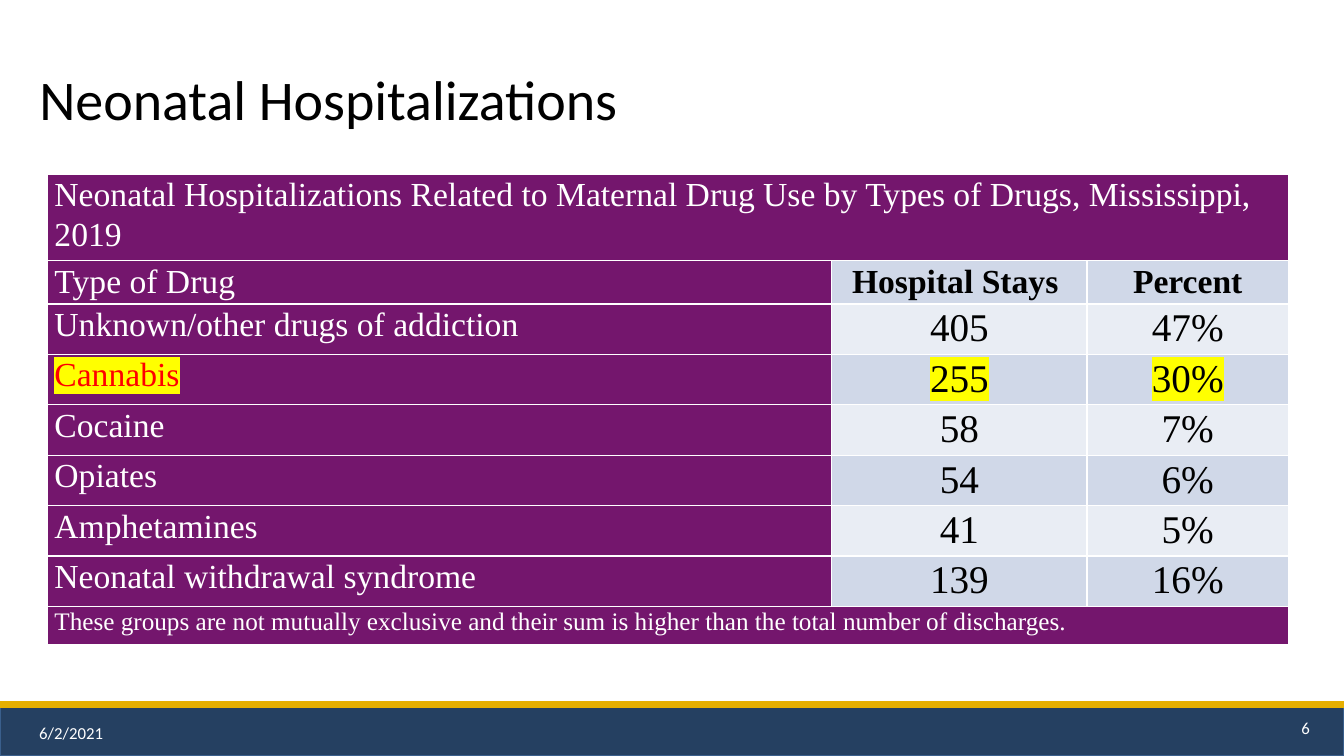
import collections
import dataclasses

import lxml.etree
import pptx
import pptx.dml.color
import pptx.enum.shapes
import pptx.enum.text
import pptx.oxml.ns
import pptx.util

Box = collections.namedtuple("Box", "left top width height")
ALIGN = pptx.enum.text.PP_ALIGN
ANCHOR = pptx.enum.text.MSO_ANCHOR


@dataclasses.dataclass(frozen=True)
class Theme:
    """Colours, fonts and type sizes of the slide."""
    white: str = "FFFFFF"
    black: str = "000000"
    navy: str = "254061"
    navy_edge: str = "3A5F8C"
    gold: str = "E6AF00"
    purple: str = "74166D"
    bands: tuple = ("D0D8E8", "E9EDF4")
    red: str = "FF0000"
    yellow: str = "FFFF00"
    sans: str = "Calibri"
    serif: str = "Times New Roman"
    title_size: int = 40
    figure_size: int = 28
    label_size: int = 24
    note_size: int = 18
    footer_size: int = 12


THEME = Theme()
COLUMN_SHARES = (7.78, 2.53, 2)
ROW_SHARES = (0.83, 0.41, *[0.4] * 6, 0.38)
CAPTION = ("Neonatal Hospitalizations Related to Maternal Drug Use "
           "by Types of Drugs, Mississippi, 2019")
NOTE = ("These groups are not mutually exclusive and their sum "
        "is higher than the total number of discharges.")
HEADINGS = ("Type of Drug", "Hospital Stays ", "Percent")
STAYS = (
    ("Unknown/other drugs of addiction", "405", "47%"),
    ("Cannabis", "255", "30%"),
    ("Cocaine", "58", "7%"),
    ("Opiates", "54", "6%"),
    ("Amphetamines", "41", "5%"),
    ("Neonatal withdrawal syndrome", "139", "16%"),
)
MARKED = "Cannabis"


def rgb(value):
    """Turn a hex string into a colour."""
    return pptx.dml.color.RGBColor.from_string(value)


def within(box, left, top, width, height):
    """Return the part of a box given in percent of its size."""
    return Box(round(box.left + box.width * left / 100),
               round(box.top + box.height * top / 100),
               round(box.width * width / 100),
               round(box.height * height / 100))


def apply_format(target, values):
    """Set each named attribute on the target."""
    for name, value in values.items():
        setattr(target, name, value)


def write(frame, text, size, colour, font, frame_format=None, **para_format):
    """Write one formatted paragraph and return its span."""
    apply_format(frame, {"word_wrap": True, **(frame_format or {})})
    para = frame.paragraphs[0]
    apply_format(para, para_format)
    span = para.add_run()
    span.text = text
    apply_format(span.font, {"size": pptx.util.Pt(size), "name": font, "bold": False})
    span.font.color.rgb = rgb(colour)
    return span


def add_solid(parent, colour):
    """Add a solid fill element."""
    fill = lxml.etree.SubElement(parent, pptx.oxml.ns.qn("a:solidFill"))
    lxml.etree.SubElement(fill, pptx.oxml.ns.qn("a:srgbClr"), val=colour)


def highlight(span, colour):
    """Mark a span with a highlight colour."""
    qn = pptx.oxml.ns.qn
    mark = lxml.etree.Element(qn("a:highlight"))
    lxml.etree.SubElement(mark, qn("a:srgbClr"), val=colour)
    span.font._element.find(qn("a:solidFill")).addnext(mark)


def add_title(page, box):
    """Place the slide title in its box."""
    title = page.shapes.title
    apply_format(title, box._asdict())
    title.fill.solid()
    title.fill.fore_color.rgb = rgb(THEME.white)
    write(title.text_frame, "Neonatal Hospitalizations", THEME.title_size,
          THEME.black, THEME.sans, {"vertical_anchor": ANCHOR.BOTTOM},
          alignment=ALIGN.LEFT, line_spacing=0.9)


def add_footer(page, box):
    """Draw the navy band with its gold rule, date and slide number."""
    band = page.shapes.add_shape(pptx.enum.shapes.MSO_SHAPE.RECTANGLE, *box)
    band.shadow.inherit = False
    band.fill.solid()
    band.fill.fore_color.rgb = rgb(THEME.navy)
    band.line.color.rgb = rgb(THEME.navy_edge)
    band.line.width = pptx.util.Pt(1)
    rule = page.shapes.add_connector(pptx.enum.shapes.MSO_CONNECTOR.STRAIGHT,
                                     box.left, box.top, box.left + box.width, box.top)
    rule.line.color.rgb = rgb(THEME.gold)
    rule.line.width = pptx.util.Pt(4.5)
    lxml.etree.SubElement(rule._element.spPr, pptx.oxml.ns.qn("a:effectLst"))
    for text, left, top, alignment in (("6/2/2021", 2.18, 15.69, ALIGN.LEFT),
                                       ("6", 75.69, 5.88, ALIGN.RIGHT)):
        label = page.shapes.add_textbox(*within(box, left, top, 22.51, 78.43))
        write(label.text_frame, text, THEME.footer_size, THEME.white, THEME.sans,
              {"vertical_anchor": ANCHOR.MIDDLE}, alignment=alignment)


def fill_cell(cell, text, size, colour, fill, alignment=ALIGN.LEFT):
    """Give a cell its borders, fill and text and return the span."""
    side = pptx.util.Inches(0.07)
    apply_format(cell, {"margin_left": side, "margin_right": side,
                        "margin_top": 0, "margin_bottom": 0})
    for edge in "LRTB":
        line = lxml.etree.SubElement(cell._tc.get_or_add_tcPr(),
                                     pptx.oxml.ns.qn(f"a:ln{edge}"),
                                     w=str(pptx.util.Pt(1)))
        add_solid(line, THEME.white)
    cell.fill.solid()
    cell.fill.fore_color.rgb = rgb(fill)
    return write(cell.text_frame, text, size, colour, THEME.serif,
                 alignment=alignment, line_spacing=1.07)


def add_stays_table(page, box):
    """Build the table of hospital stays by type of drug."""
    table = page.shapes.add_table(len(ROW_SHARES), len(COLUMN_SHARES), *box).table
    for column, share in zip(table.columns, COLUMN_SHARES):
        column.width = round(box.width * share / sum(COLUMN_SHARES))
    for row, share in zip(table.rows, ROW_SHARES):
        row.height = round(box.height * share / sum(ROW_SHARES))
    last = len(ROW_SHARES) - 1
    for index, text, size in ((0, CAPTION, THEME.label_size),
                              (last, NOTE, THEME.note_size)):
        table.cell(index, 0).merge(table.cell(index, len(COLUMN_SHARES) - 1))
        fill_cell(table.cell(index, 0), text, size, THEME.white, THEME.purple)
    for index, (label, *figures) in enumerate((HEADINGS, *STAYS)):
        marked, heading = label == MARKED, index == 0
        spans = [fill_cell(table.cell(index + 1, 0), label, THEME.label_size,
                           THEME.red if marked else THEME.white, THEME.purple)]
        for column, figure in enumerate(figures, 1):
            span = fill_cell(table.cell(index + 1, column), figure,
                             THEME.label_size if heading else THEME.figure_size,
                             THEME.black, THEME.bands[index % 2], ALIGN.CENTER)
            span.font.bold = heading
            spans.append(span)
        if marked:
            for span in spans:
                highlight(span, THEME.yellow)


def main():
    """Build and save the deck."""
    deck = pptx.Presentation()
    apply_format(deck, {"slide_width": pptx.util.Inches(13.33),
                        "slide_height": pptx.util.Inches(7.5)})
    page = deck.slides.add_slide(deck.slide_layouts[5])
    whole = Box(0, 0, deck.slide_width, deck.slide_height)
    add_footer(page, within(whole, 0, 93.2, 100, 6.8))
    add_title(page, within(whole, 2.18, 2.93, 83.42, 15.33))
    add_stays_table(page, within(whole, 3.53, 23.07, 92.35, 53.6))
    deck.save("out.pptx")


if __name__ == "__main__":
    main()
